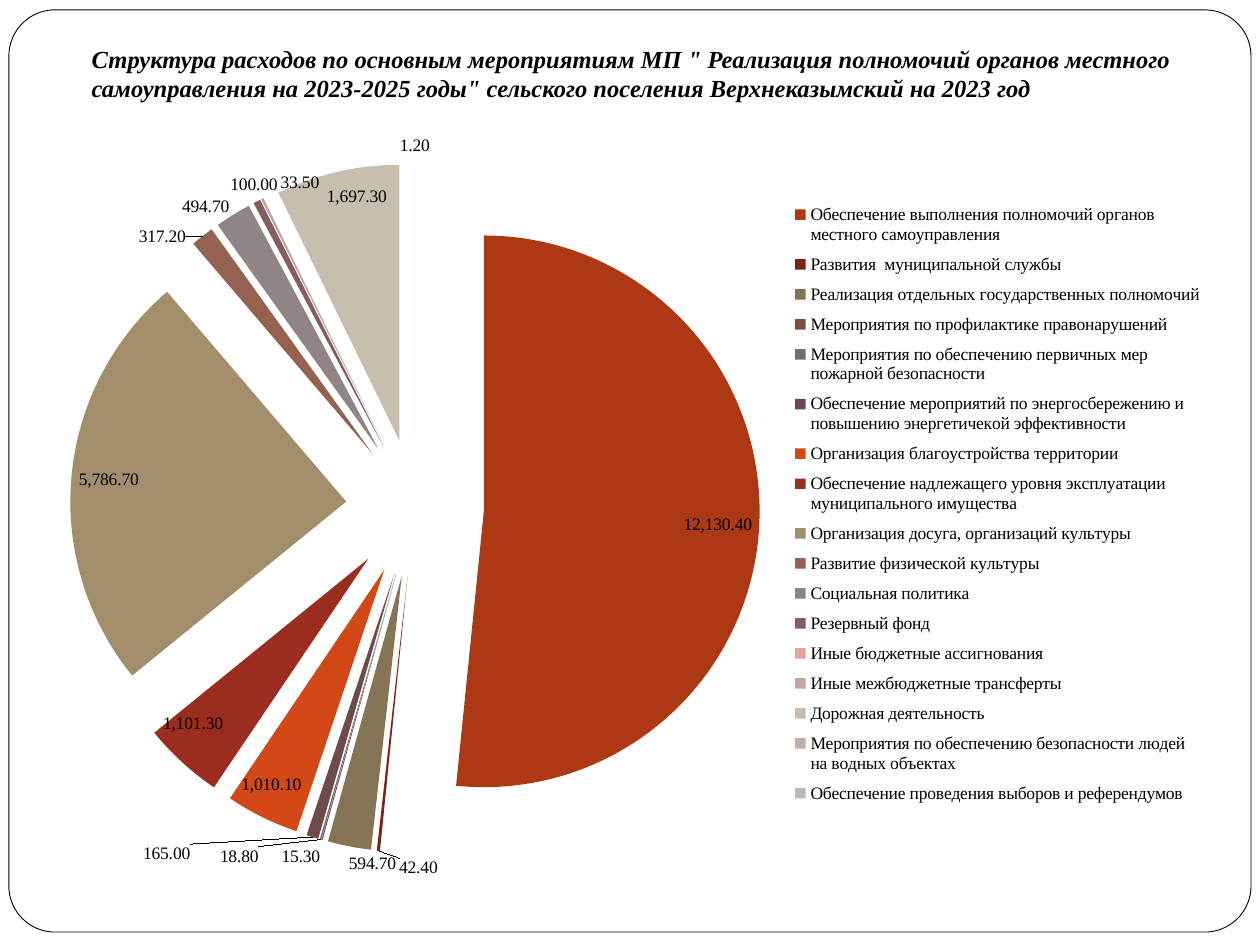
from dataclasses import dataclass
from lxml.etree import SubElement
from pptx import Presentation
from pptx.chart.data import CategoryChartData
from pptx.dml.color import RGBColor
from pptx.enum.chart import XL_CHART_TYPE, XL_LABEL_POSITION, XL_LEGEND_POSITION
from pptx.enum.shapes import MSO_SHAPE
from pptx.enum.text import MSO_ANCHOR
from pptx.oxml import parse_xml
from pptx.oxml.ns import nsdecls, qn
from pptx.util import Cm, Pt


@dataclass(frozen=True)
class Theme:
    font: str = "Times New Roman"
    title_size: float = 14
    chart_size: float = 10
    text: RGBColor = RGBColor(0, 0, 0)
    background: RGBColor = RGBColor(255, 255, 255)


@dataclass(frozen=True)
class Box:
    left: float
    top: float
    width: float
    height: float

    def lengths(self):
        return Cm(self.left), Cm(self.top), Cm(self.width), Cm(self.height)


THEME = Theme()
NUMBER_FORMAT = "#,##0.00;;"
EXPLOSION = 25
TITLE = (
    'Структура расходов по основным мероприятиям МП " Реализация полномочий органов местного '
    'самоуправления на 2023-2025 годы" сельского поселения Верхнеказымский на 2023 год'
)
EXPENSES = [
    ("Обеспечение выполнения полномочий органов местного самоуправления", 12130.4, "AD3814"),
    ("Развития  муниципальной службы", 42.4, "7B2318"),
    ("Реализация отдельных государственных полномочий", 594.7, "857456"),
    ("Мероприятия по профилактике правонарушений", 15.3, "7A5042"),
    ("Мероприятия по обеспечению первичных мер пожарной безопасности", 18.8, "766B6E"),
    ("Обеспечение мероприятий по энергосбережению и повышению энергетичекой эффективности", 165, "6D4B4B"),
    ("Организация благоустройства территории", 1010.1, "D34817"),
    ("Обеспечение надлежащего уровня эксплуатации муниципального имущества", 1101.3, "9B2D1F"),
    ("Организация досуга, организаций культуры", 5786.7, "A28E6A"),
    ("Развитие физической культуры", 317.2, "956251"),
    ("Социальная политика", 494.7, "918485"),
    ("Резервный фонд", 100, "855D5D"),
    ("Иные бюджетные ассигнования", 0, "E0A79B"),
    ("Иные межбюджетные трансферты", 33.5, "C5A5A2"),
    ("Дорожная деятельность", 1697.3, "C8BEAE"),
    ("Мероприятия по обеспечению безопасности людей на водных объектах", 1.2, "C3AEA8"),
    ("Обеспечение проведения выборов и референдумов", 0, "BEB9BA"),
]
INSIDE_LABEL_MINIMUM = 1000
LABEL_SHIFTS = {
    1: (0.05, 0),
    2: (0.04, 0),
    3: (0, 0),
    4: (-0.05, 0),
    5: (-0.1, 0),
    6: (-0.02, -0.02),
    7: (-0.02, -0.03),
    8: (0, -0.01),
    9: (-0.01, 0.02),
    10: (0, 0.01),
    11: (0.02, 0),
    13: (0.05, 0),
    14: (-0.01, 0.01),
}


def style_font(font, size):
    font.name = THEME.font
    font.size = Pt(size)
    font.color.rgb = THEME.text


def add_frame(slide, box):
    shape = slide.shapes.add_shape(MSO_SHAPE.ROUNDED_RECTANGLE, *box.lengths())
    shape.adjustments[0] = 0.05
    shape.shadow.inherit = False
    shape.fill.solid()
    shape.fill.fore_color.rgb = THEME.background
    shape.line.color.rgb = THEME.text
    shape.line.width = Pt(0.5)


def add_title(slide, box):
    text_frame = slide.shapes.add_textbox(*box.lengths()).text_frame
    text_frame.word_wrap = True
    text_frame.vertical_anchor = MSO_ANCHOR.TOP
    text_frame.text = TITLE
    font = text_frame.paragraphs[0].runs[0].font
    style_font(font, THEME.title_size)
    font.bold = font.italic = True


def make_layout(**values):
    layout = parse_xml(f"<c:layout {nsdecls('c')}><c:manualLayout/></c:layout>")
    for name, value in values.items():
        SubElement(layout[0], qn(f"c:{name}")).set("val", str(value))
    return layout


def place_area(element, previous, left, top, width, height, **target):
    for layout in element.findall(qn("c:layout")):
        element.remove(layout)
    layout = make_layout(**target, xMode="edge", yMode="edge", x=left, y=top, w=width, h=height)
    if previous is None:
        element.insert(0, layout)
    else:
        previous.addnext(layout)


def style_slice(point, value, color):
    point.format.fill.solid()
    point.format.fill.fore_color.rgb = RGBColor.from_string(color)
    label = point.data_label
    style_font(label.font, THEME.chart_size)
    inside = value > INSIDE_LABEL_MINIMUM
    label.position = XL_LABEL_POSITION.INSIDE_END if inside else XL_LABEL_POSITION.OUTSIDE_END


def add_expense_chart(slide, box):
    data = CategoryChartData(number_format=NUMBER_FORMAT)
    data.categories = [name for name, _, _ in EXPENSES]
    data.add_series("Series 1", [value for _, value, _ in EXPENSES])
    chart = slide.shapes.add_chart(XL_CHART_TYPE.PIE, *box.lengths(), data).chart
    style_font(chart.font, THEME.chart_size)
    chart.has_title = False
    chart.has_legend = True
    legend = chart.legend
    legend.position = XL_LEGEND_POSITION.RIGHT
    legend.include_in_layout = False
    style_font(legend.font, THEME.chart_size)

    plot = chart.plots[0]
    plot.vary_by_categories = True
    series = plot.series[0]
    labels = series.data_labels
    labels.show_value = True
    labels.number_format = NUMBER_FORMAT
    labels.number_format_is_linked = False
    style_font(labels.font, THEME.chart_size)
    for index, (_, value, color) in enumerate(EXPENSES):
        style_slice(series.points[index], value, color)
    label_elements = labels._element.findall(qn("c:dLbl"))
    for index, (horizontal, vertical) in LABEL_SHIFTS.items():
        label_elements[index].find(qn("c:idx")).addnext(make_layout(x=horizontal, y=vertical))
    explosion = parse_xml(f'<c:explosion {nsdecls("c")} val="{EXPLOSION}"/>')
    series._element.find(qn("c:dPt")).addprevious(explosion)

    plot_area = chart._chartSpace.chart.plotArea
    place_area(plot_area, None, 0.03, 0.06, 0.59, 0.88, layoutTarget="inner")
    legend_element = legend._element
    place_area(legend_element, legend_element.find(qn("c:legendPos")), 0.64, 0.1, 0.34, 0.79)


def build_slide(presentation):
    slide = presentation.slides.add_slide(presentation.slide_layouts[6])
    add_frame(slide, Box(0.18, 0.2, 25.04, 18.59))
    add_title(slide, Box(1.6, 0.76, 23.8, 1.6))
    add_expense_chart(slide, Box(0.5, 2.34, 24.2, 15.8))


def main():
    presentation = Presentation()
    presentation.slide_width = Cm(25.4)
    presentation.slide_height = Cm(19.05)
    build_slide(presentation)
    presentation.save("out.pptx")


if __name__ == "__main__":
    main()
